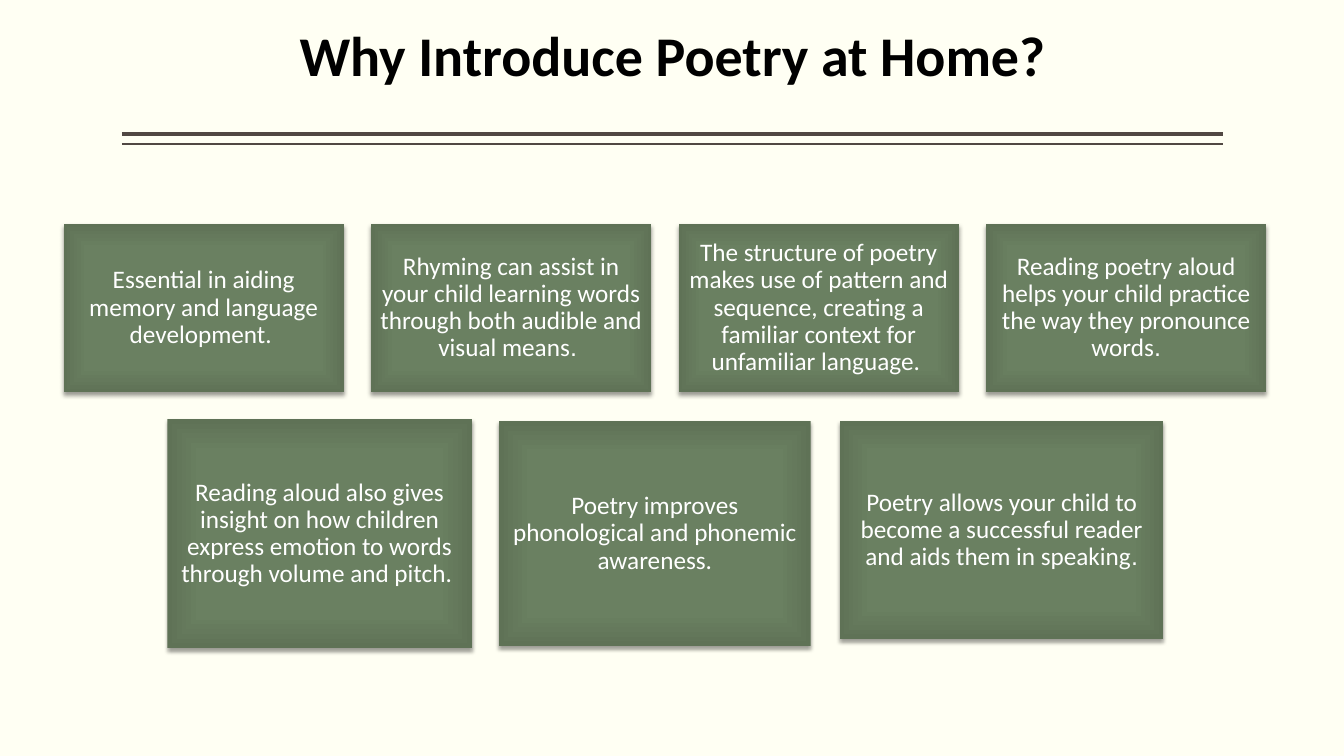
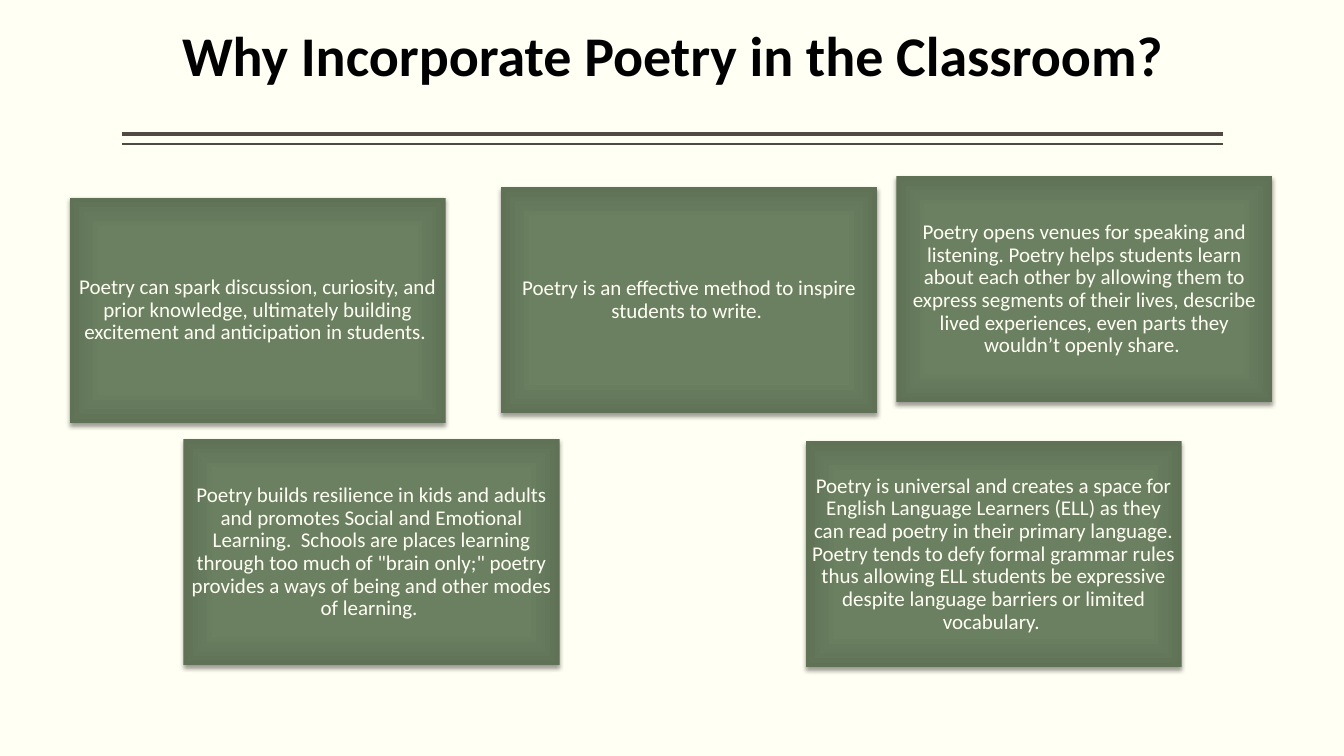
from lxml import etree
from pptx import Presentation
from pptx.dml.color import RGBColor
from pptx.enum import shapes, text
from pptx.oxml import ns, parse_xml
from pptx.util import Inches, Pt

# Shared look
CREAM, BROWN, BLACK, WHITE = "FFFFF3", "514843", "000000", "FFFFFF"
RULES = [(1.33, 3), (1.43, 1)]  # height on the slide, line width
GRADIENT_STOPS = [(0, "6B8162"), (71, "6A8061"), (100, "5F7256")]
A = ns.nsdecls("a")
STOPS_XML = "".join(
    f'<a:gs pos="{position * 1000}"><a:srgbClr val="{color}"/></a:gs>'
    for position, color in GRADIENT_STOPS)
GRADIENT_XML = (
    f'<a:gradFill {A} rotWithShape="1"><a:gsLst>{STOPS_XML}</a:gsLst><a:path path="rect">'
    '<a:fillToRect l="50000" t="50000" r="50000" b="50000"/></a:path></a:gradFill>')
SHADOW_XML = (
    f'<a:effectLst {A}><a:outerShdw blurRad="{Pt(3.1)}" dist="{Pt(2)}" dir="5400000" '
    'algn="ctr" rotWithShape="0"><a:srgbClr val="000000"><a:alpha val="38000"/>'
    '</a:srgbClr></a:outerShdw></a:effectLst>')


def rgb(value):
    return RGBColor.from_string(value)


def write_text(shape, content, size, color, inset, anchor, bold=False):
    """Centred text; whatever follows a | is set in Arial."""
    frame = shape.text_frame
    margins = {f"margin_{side}": Inches(inset) for side in ("left", "top", "right", "bottom")}
    for name, value in {"word_wrap": True, "vertical_anchor": anchor, **margins}.items():
        setattr(frame, name, value)
    paragraph = frame.paragraphs[0]
    paragraph.alignment = text.PP_ALIGN.CENTER
    paragraph.line_spacing = 0.9
    for part, font_name in zip(content.split("|"), ("Calibri", "Arial")):
        run = paragraph.add_run()
        run.text = part
        for name, value in {"name": font_name, "size": Pt(size), "bold": bold}.items():
            setattr(run.font, name, value)
        run.font.color.rgb = rgb(color)


# Cards: left, top, width, height, text
home_top_row = [
    "Essential in aiding memory and language development. ",
    "Rhyming can assist in your child learning words through both audible and visual means|. ",
    "The structure of poetry makes use of pattern and sequence, creating a familiar context "
    "for unfamiliar language. ",
    "Reading poetry aloud helps your child practice the way they pronounce words|.",
]
home_cards = [(0.63 + 3.05 * column, 2.22, 2.78, 1.67, words)
              for column, words in enumerate(home_top_row)]
home_cards += [
    (1.66, 4.16, 3.02, 2.27, "Reading aloud also gives insight on how children express "
     "emotion to words through volume and pitch. "),
    (4.95, 4.18, 3.09, 2.23, "Poetry improves phonological and phonemic awareness."),
    (8.33, 4.18, 3.21, 2.16, "Poetry allows your child to become a successful reader and "
     "aids them in speaking|."),
]
classroom_cards = [(left, top, 3.73, 2.24, words) for left, top, words in [
    (0.69, 1.96, "Poetry can spark discussion, curiosity, and prior knowledge, ultimately "
     "building excitement and anticipation in students. "),
    (4.97, 1.86, "Poetry is an effective method to inspire students to write. "),
    (8.89, 1.75, "Poetry opens venues for speaking and listening. Poetry helps students learn "
     "about each other by allowing them to express segments of their lives, describe lived "
     "experiences, even parts they wouldn’t openly share. "),
    (1.82, 4.36, "Poetry builds resilience in kids and adults and promotes Social and Emotional "
     "Learning.  Schools are places learning through too much of \"brain only;\" poetry "
     "provides a ways of being and other modes of learning. "),
    (7.99, 4.38, "Poetry is universal and creates a space for English Language Learners (ELL) "
     "as they can read poetry in their primary language. Poetry tends to defy formal grammar "
     "rules thus allowing ELL students be expressive despite language barriers or limited "
     "vocabulary. "),
]]

# Title, cards, text size, text colour, text inset
pages = [
    ("Why Introduce Poetry at Home?", home_cards, 18, WHITE, 0.07),
    ("Why Incorporate Poetry in the Classroom?", classroom_cards, 15, CREAM, 0.06),
]

presentation = Presentation()
presentation.slide_width, presentation.slide_height = Inches(13.33), Inches(7.5)
background = presentation.slide_master.background.fill
background.solid()
background.fore_color.rgb = rgb(CREAM)

for title, cards, size, color, inset in pages:
    slide = presentation.slides.add_slide(presentation.slide_layouts[6])

    # Double rule under the title
    for height, width in RULES:
        rule = slide.shapes.add_connector(
            shapes.MSO_CONNECTOR.STRAIGHT,
            Inches(1.21), Inches(height), Inches(12.13), Inches(height))
        rule.line.color.rgb = rgb(BROWN)
        rule.line.width = Pt(width)
        etree.SubElement(rule._element.spPr, ns.qn("a:effectLst"))

    # Title
    title_box = slide.shapes.add_textbox(Inches(1.21), Inches(0.28), Inches(10.92), Inches(0.7))
    write_text(title_box, title, 40, BLACK, 0, text.MSO_ANCHOR.TOP, bold=True)

    # Cards
    for *bounds, words in cards:
        card = slide.shapes.add_shape(
            shapes.MSO_SHAPE.RECTANGLE, *(Inches(length) for length in bounds))
        card.line.fill.background()
        card.line._ln.addprevious(parse_xml(GRADIENT_XML))
        card.line._ln.addnext(parse_xml(SHADOW_XML))
        write_text(card, words, size, color, inset, text.MSO_ANCHOR.MIDDLE)

presentation.save("out.pptx")
